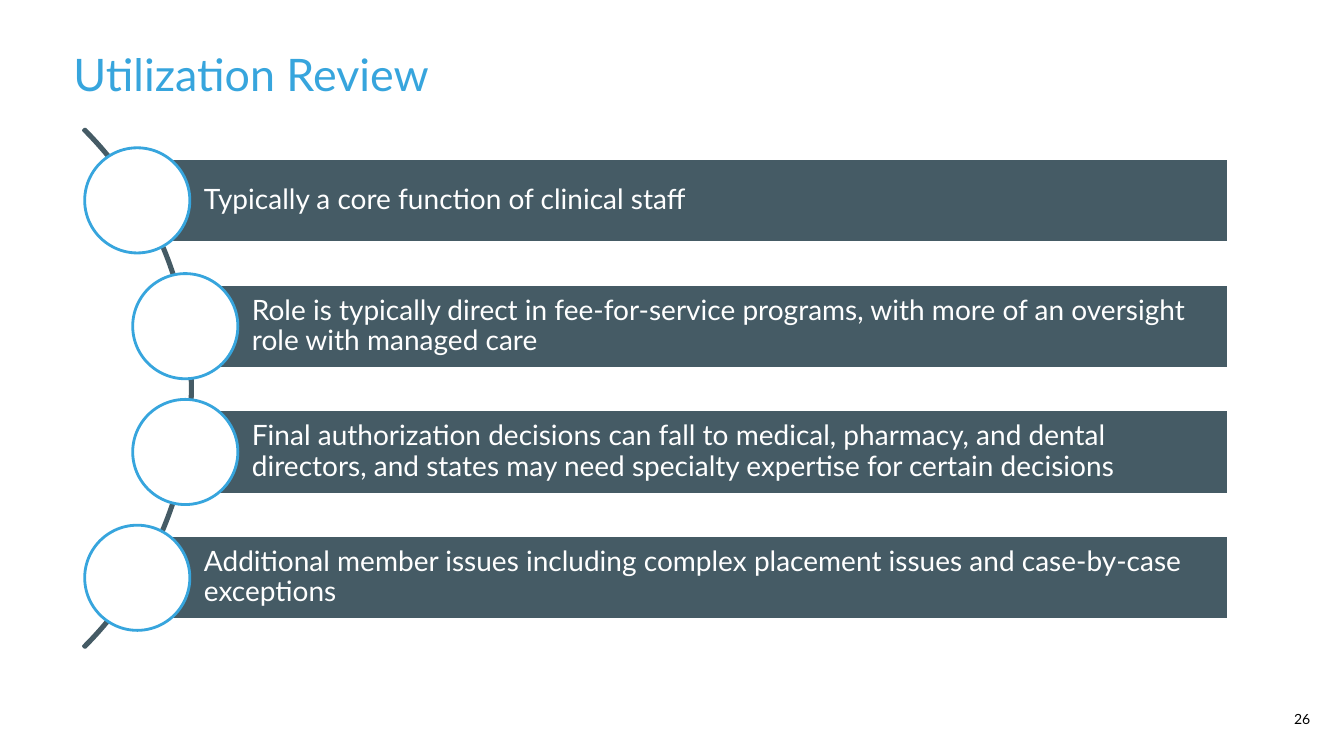
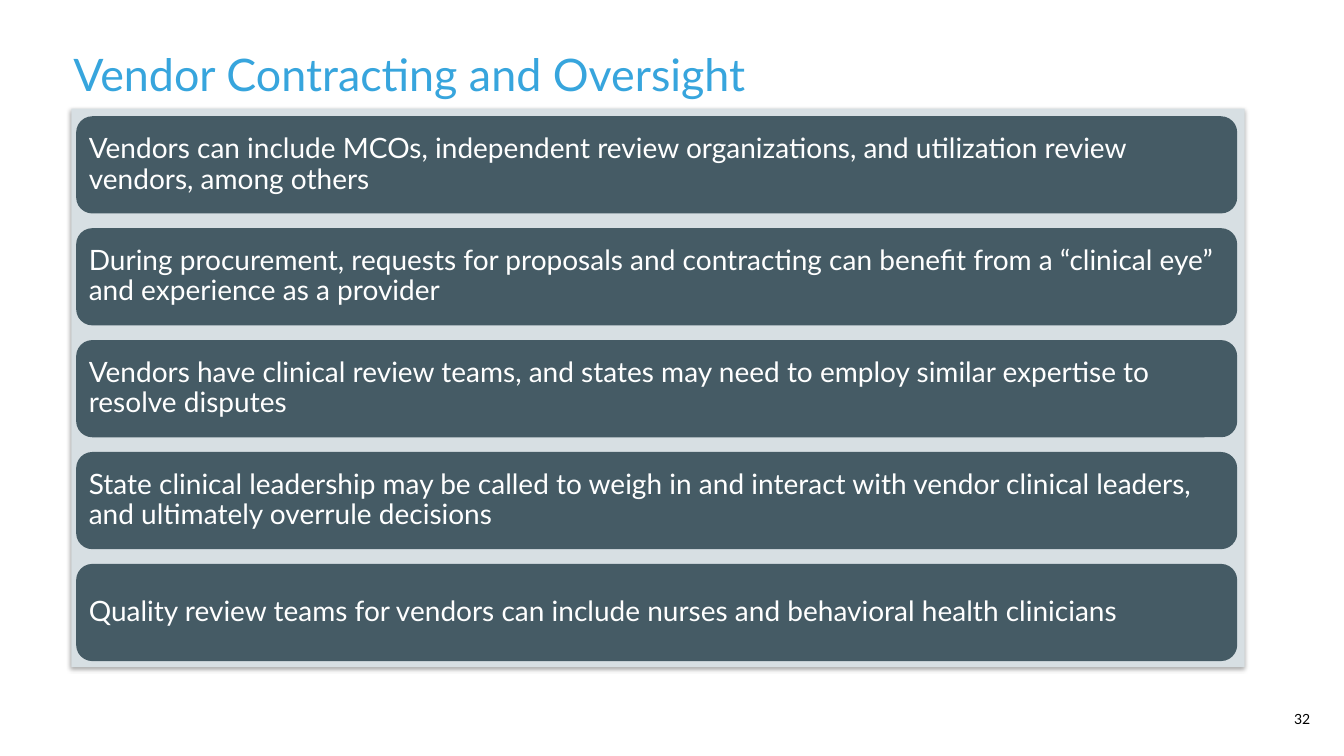
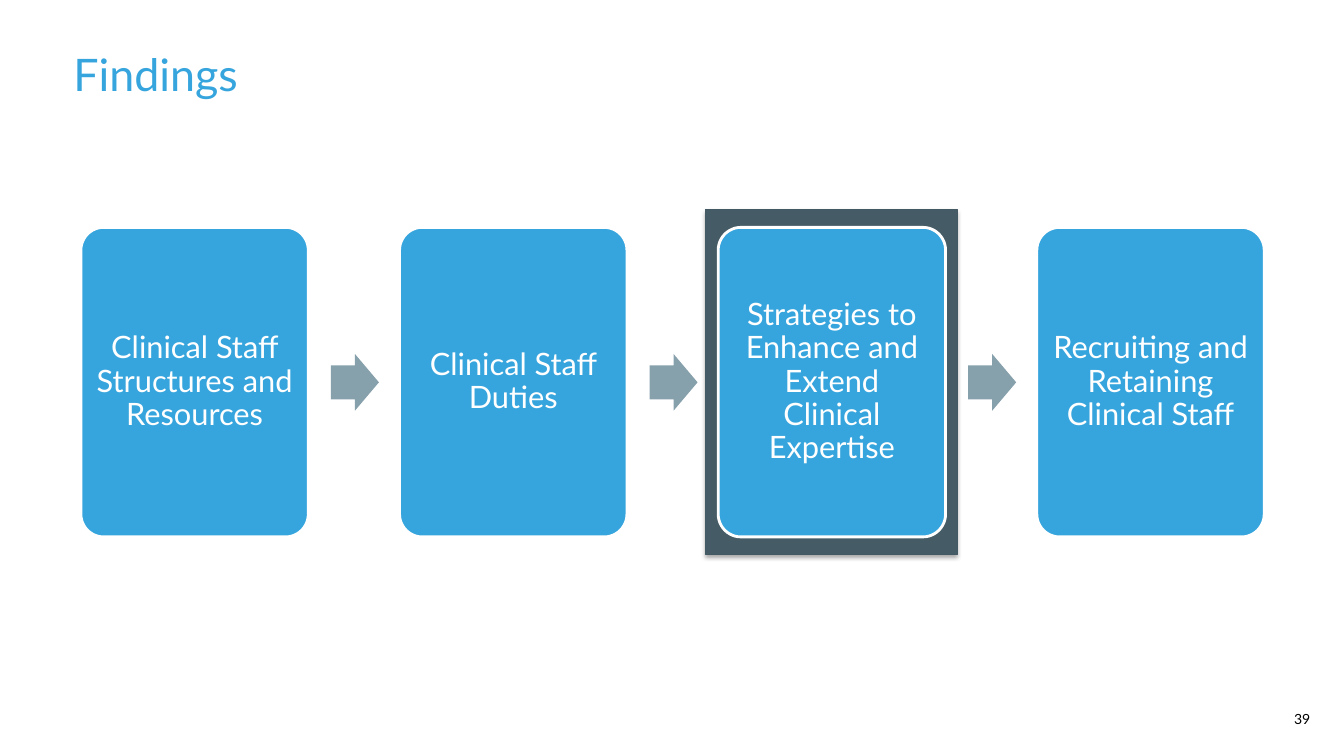
from pptx import Presentation
from pptx.dml.color import RGBColor
from pptx.enum.shapes import MSO_SHAPE as Preset
from pptx.enum.text import MSO_ANCHOR as Anchor, PP_ALIGN as Align
from pptx.oxml import parse_xml
from pptx.oxml.ns import nsdecls, qn
from pptx.util import Cm, Pt

BLUE, SLATE, STEEL = "37A5DD", "455B65", "86A0AC"
PALE, EDGE, WHITE, BLACK = "D7DFE3", "435964", "FFFFFF", "000000"
FONT = "Lato"


def color(value):
    return RGBColor.from_string(value)


class SlideBuilder:
    """Holds the deck style and the current page; lengths are centimetres."""

    def __init__(self):
        self.deck = Presentation()
        self.deck.slide_width, self.deck.slide_height = Cm(33.87), Cm(19.05)
        self.page = None

    def new_page(self, title, number):
        self.page = self.deck.slides.add_slide(self.deck.slide_layouts[6])
        self.label(number, 32.18, 17.78, 1.27, 0.69, 10, BLACK, Align.CENTER)
        self.label(title, 1.6, 0.84, 29.57, 2.03, 32, BLUE)

    def set_text(self, box, text, size, ink, align=Align.LEFT, spacing=1.0):
        frame = box.text_frame
        frame.text = text
        frame.word_wrap = True
        frame.vertical_anchor = Anchor.MIDDLE
        para = frame.paragraphs[0]
        para.alignment = align
        para.line_spacing = spacing
        font = para.runs[0].font
        font.name, font.size, font.color.rgb = FONT, Pt(size), color(ink)

    def label(self, text, left, top, width, height, size, ink, align=Align.LEFT):
        box = self.page.shapes.add_textbox(Cm(left), Cm(top), Cm(width), Cm(height))
        self.set_text(box, text, size, ink, align)

    def shape(self, preset, left, top, width, height, fill=None, line=None,
              weight=2, adjust=()):
        box = self.page.shapes.add_shape(preset, Cm(left), Cm(top), Cm(width), Cm(height))
        box.shadow.inherit = False
        for index, value in enumerate(adjust):
            box.adjustments[index] = value
        if fill:
            box.fill.solid()
            box.fill.fore_color.rgb = color(fill)
        else:
            box.fill.background()
        if line:
            box.line.color.rgb = color(line)
            box.line.width = Pt(weight)
        else:
            box.line.fill.background()
        return box

    def text_shape(self, text, inset, size, align, *args, left_inset=None, **style):
        """Draw a shape that carries white text; args and style go to shape()."""
        box = self.shape(*args, **style)
        frame = box.text_frame
        frame.margin_left = Cm(left_inset or inset)
        frame.margin_right = frame.margin_top = frame.margin_bottom = Cm(inset)
        self.set_text(box, text, size, WHITE, align, 0.9)

    def shadowed_panel(self, *args, **style):
        panel = self.shape(Preset.RECTANGLE, *args, **style)
        panel._element.spPr.find(qn("a:effectLst")).append(parse_xml(
            f'<a:outerShdw {nsdecls("a")} blurRad="40000" dist="23000" dir="5400000" '
            f'rotWithShape="0"><a:srgbClr val="{BLACK}"><a:alpha val="35000"/>'
            '</a:srgbClr></a:outerShdw>'))


def utilization_review(builder):
    builder.new_page("Utilization Review", "26")
    builder.shape(Preset.BLOCK_ARC, -13.64, 0.54, 18.49, 18.49, line=SLATE,
                  adjust=(189, 27, 0.003))
    outer, inner, right = 3.46, 4.67, 30.97
    top, pitch, height, circle = 3.99, 3.17, 2.12, 2.65
    bars = [
        (outer, "Typically a core function of clinical staff"),
        (inner, "Role is typically direct in fee-for-service programs, with more "
                "of an oversight role with managed care"),
        (inner, "Final authorization decisions can fall to medical, pharmacy, and "
                "dental directors, and states may need specialty expertise for "
                "certain decisions"),
        (outer, "Additional member issues including complex placement issues and "
                "case-by-case exceptions"),
    ]
    for row, (left, text) in enumerate(bars):
        bar_top = top + row * pitch
        builder.text_shape(text, 0.16, 20, Align.LEFT, Preset.RECTANGLE, left, bar_top,
                           right - left, height, SLATE, WHITE, left_inset=1.68)
        builder.shape(Preset.OVAL, left - circle / 2, bar_top + (height - circle) / 2,
                      circle, circle, WHITE, BLUE)


def vendor_oversight(builder):
    builder.new_page("Vendor Contracting and Oversight", "32")
    builder.shadowed_panel(1.8, 2.74, 29.57, 14.07, PALE)
    points = [
        "Vendors can include MCOs, independent review organizations, and utilization "
        "review vendors, among others",
        "During procurement, requests for proposals and contracting can benefit from "
        "a “clinical eye” and experience as a provider",
        "Vendors have clinical review teams, and states may need to employ similar "
        "expertise to resolve disputes",
        "State clinical leadership may be called to weigh in and interact with vendor "
        "clinical leaders, and ultimately overrule decisions",
        "Quality review teams for vendors can include nurses and behavioral health "
        "clinicians",
    ]
    for row, text in enumerate(points):
        builder.text_shape(text, 0.2, 20, Align.LEFT, Preset.ROUNDED_RECTANGLE,
                           1.92, 2.93 + row * 2.82, 29.26, 2.45, SLATE)


def findings(builder):
    builder.new_page("Findings", "39")
    builder.shadowed_panel(17.77, 5.28, 6.35, 8.69, SLATE, EDGE, 0.75)
    steps = [
        "Clinical Staff Structures and Resources",
        "Clinical Staff Duties",
        "Strategies to Enhance and Extend Clinical Expertise",
        "Recruiting and Retaining Clinical Staff",
    ]
    for column, text in enumerate(steps):
        left = 2.04 + column * 8.03
        if column:
            builder.shape(Preset.RIGHT_ARROW, left - 1.73, 8.92, 1.21, 1.43, STEEL,
                          adjust=(0.6, 0.5))
        builder.text_shape(text, 0.23, 22, Align.CENTER, Preset.ROUNDED_RECTANGLE,
                           left, 5.73, 5.73, 7.8, BLUE, WHITE, adjust=(0.1,))


def main():
    builder = SlideBuilder()
    utilization_review(builder)
    vendor_oversight(builder)
    findings(builder)
    builder.deck.save("out.pptx")


if __name__ == "__main__":
    main()
